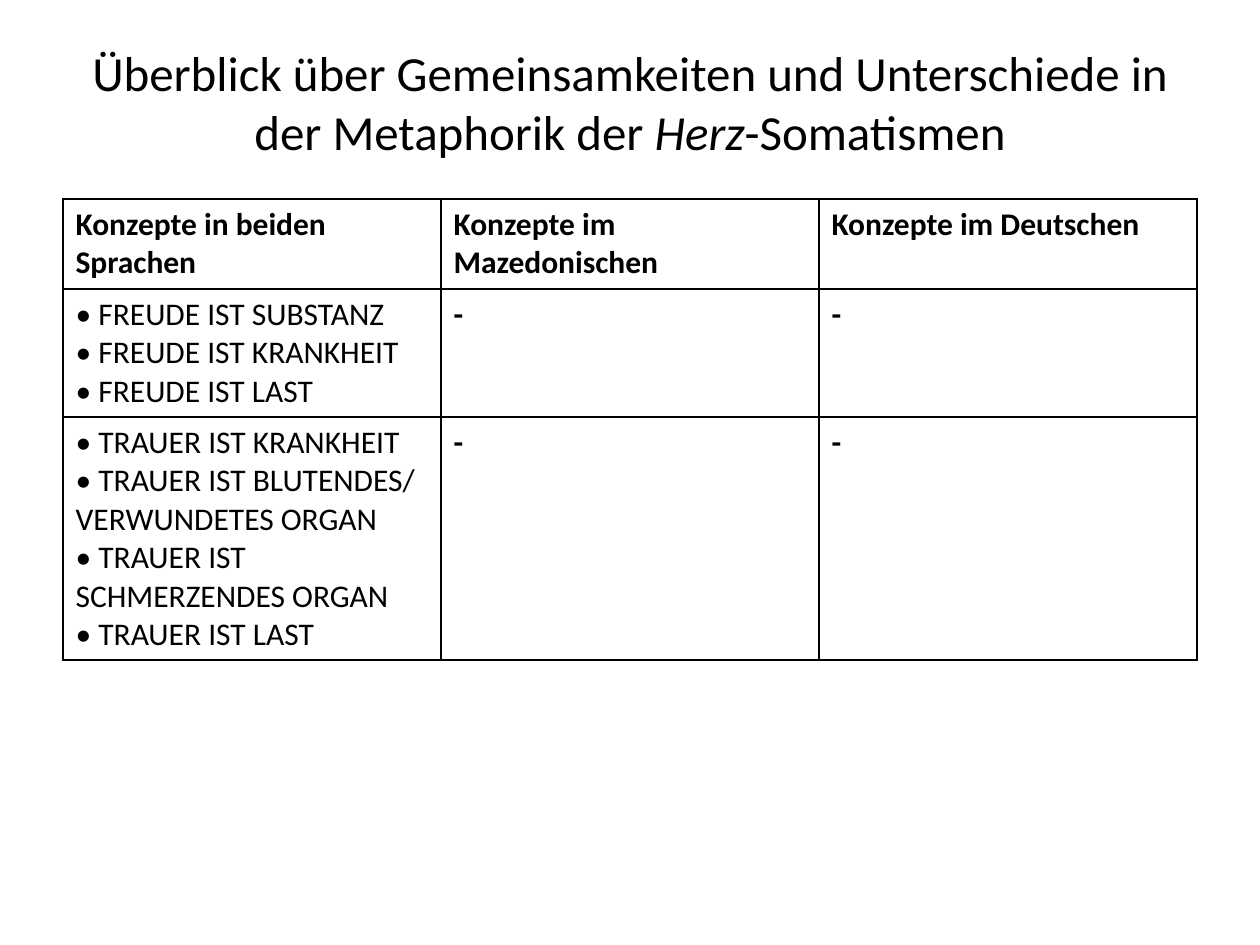
from lxml import etree
from pptx import Presentation
from pptx.dml.color import RGBColor
from pptx.enum.text import MSO_ANCHOR, PP_ALIGN
from pptx.oxml.ns import qn
from pptx.util import Pt

PX = 914400 // 126  # EMU per px
BLACK = RGBColor(0x00, 0x00, 0x00)
FONT = "Calibri"
CENTER = PP_ALIGN.CENTER
MIDDLE = MSO_ANCHOR.MIDDLE

TITLE = [
    ("Überblick über Gemeinsamkeiten und Unterschiede in der Metaphorik der ", False),
    ("Herz", True),
    ("-Somatismen", False),
]
HEADER = ["Konzepte in beiden Sprachen", "Konzepte im Mazedonischen",
          "Konzepte im Deutschen"]
JOY = ["FREUDE IST SUBSTANZ", "FREUDE IST KRANKHEIT", "FREUDE IST LAST"]
GRIEF = ["TRAUER IST KRANKHEIT", "TRAUER IST BLUTENDES/ VERWUNDETES ORGAN",
         "TRAUER IST SCHMERZENDES ORGAN", "TRAUER IST LAST"]
ROW_HEIGHTS = [90, 128, 243]


def add_run(p, text, size, bold=False, italic=False):
    r = p.add_run()
    r.text = text
    r.font.name = FONT
    r.font.size = Pt(size)
    r.font.bold = bold
    r.font.italic = italic
    r.font.color.rgb = BLACK


def add_borders(cell):
    tc_pr = cell._tc.get_or_add_tcPr()
    for side in ("a:lnL", "a:lnR", "a:lnT", "a:lnB"):
        ln = etree.SubElement(tc_pr, qn(side), w=str(Pt(1)))
        fill = etree.SubElement(ln, qn("a:solidFill"))
        etree.SubElement(fill, qn("a:srgbClr"), val=str(BLACK))


def fill_cell(cell, lines, bold):
    add_borders(cell)
    cell.fill.background()
    tf = cell.text_frame
    for i, line in enumerate(lines):
        p = tf.add_paragraph() if i else tf.paragraphs[0]
        add_run(p, line, 18, bold=bold)


def add_title(s, x, y, w, h):
    tf = s.shapes.add_textbox(x * PX, y * PX, w * PX, h * PX).text_frame
    tf.word_wrap = True
    tf.vertical_anchor = MIDDLE
    p = tf.paragraphs[0]
    p.alignment = CENTER
    for text, italic in TITLE:
        add_run(p, text, 28, italic=italic)


def add_concept_table(s, x, y, w):
    rows = [[[text] for text in HEADER]]
    for concepts in (JOY, GRIEF):
        rows.append([[f"• {c}" for c in concepts], ["-"], ["-"]])
    table = s.shapes.add_table(len(rows), len(HEADER), x * PX, y * PX, w * PX,
                               sum(ROW_HEIGHTS) * PX).table
    table.first_row = False
    table.horz_banding = False
    for col in table.columns:
        col.width = w * PX // len(HEADER)
    for i, cells in enumerate(rows):
        table.rows[i].height = ROW_HEIGHTS[i] * PX
        for j, lines in enumerate(cells):
            # Only the shared concepts are set in regular weight
            fill_cell(table.cell(i, j), lines, bold=i == 0 or j > 0)


def main():
    prs = Presentation()
    prs.slide_width = 1260 * PX
    prs.slide_height = 945 * PX
    s = prs.slides.add_slide(prs.slide_layouts[6])
    # Title
    add_title(s, 63, 22, 1134, 158)
    # Table of shared and language-specific concepts
    add_concept_table(s, 63, 199, 1134)
    prs.save("out.pptx")


if __name__ == "__main__":
    main()
